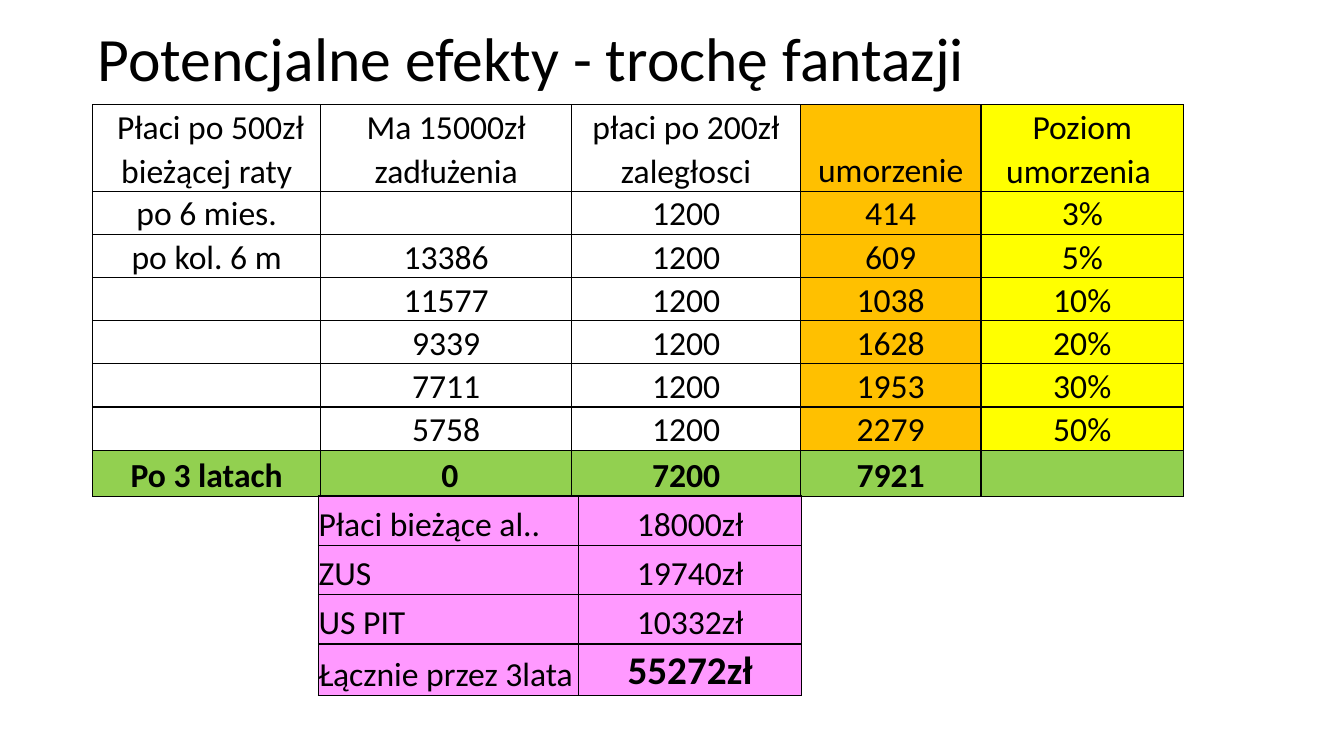
from dataclasses import dataclass

from lxml.etree import SubElement
from pptx import Presentation
from pptx.dml.color import RGBColor
from pptx.enum.text import MSO_ANCHOR as ANCHOR, PP_ALIGN as ALIGN
from pptx.oxml.ns import qn
from pptx.util import Inches, Pt


@dataclass(frozen=True)
class Theme:
    """Font, colours and type sizes of the slide."""
    font: str = "Calibri"
    ink: str = "000000"
    orange: str = "FFC000"
    yellow: str = "FFFF00"
    green: str = "92D050"
    pink: str = "FF99FF"
    title: int = 44
    body: int = 24
    total: int = 28
    border: float = 1


THEME = Theme()

HEADERS = [" Płaci po 500zł bieżącej raty", "Ma 15000zł zadłużenia",
           "płaci po 200zł zaległosci", "umorzenie", "Poziom umorzenia "]
PERIODS = [
    ["po 6 mies.", "", "1200", "414", "3%"],
    ["po kol. 6 m", "13386", "1200", "609", "5%"],
    ["", "11577", "1200", "1038", "10%"],
    ["", "9339", "1200", "1628", "20%"],
    ["", "7711", "1200", "1953", "30%"],
    ["", "5758", "1200", "2279", "50%"],
]
AFTER_3_YEARS = ["Po 3 latach", " 0", "7200", "7921", ""]
PAYMENTS = [
    ["Płaci bieżące al..", "18000zł"],
    ["ZUS", "19740zł"],
    ["US PIT", "10332zł"],
    ["Łącznie przez 3lata", "55272zł"],
]


def write(tf, text, size=THEME.body, bold=False, align=ALIGN.CENTER, spacing=1.0):
    """Put one formatted paragraph into a text frame."""
    p = tf.paragraphs[0]
    p.alignment, p.line_spacing = align, spacing
    p.font.size = Pt(size)
    if text:
        r = p.add_run()
        r.text = text
        r.font.name, r.font.size, r.font.bold = THEME.font, Pt(size), bold
        r.font.color.rgb = RGBColor.from_string(THEME.ink)


def add_title(s, text):
    """Add the slide title."""
    sp = s.shapes.add_textbox(Inches(0.92), Inches(0.18), Inches(11.5), Inches(0.86))
    tf = sp.text_frame
    tf.word_wrap, tf.vertical_anchor = True, ANCHOR.MIDDLE
    tf.margin_left = tf.margin_right = tf.margin_top = tf.margin_bottom = Inches(0.05)
    write(tf, text, size=THEME.title, align=ALIGN.LEFT, spacing=0.9)


def add_grid(s, left, top, widths, heights):
    """Add a plain table with the given column widths and row heights."""
    table = s.shapes.add_table(len(heights), len(widths), Inches(left), Inches(top),
                               Inches(sum(widths)), Inches(sum(heights))).table
    table.first_row = table.horz_banding = False
    for column, width in zip(table.columns, widths):
        column.width = Inches(width)
    for row, height in zip(table.rows, heights):
        row.height = Inches(height)
    return table


def fill_cell(cell, text, fill=None, margin=0, **fmt):
    """Give a cell its borders, fill, margins and text."""
    props = cell._tc.get_or_add_tcPr()
    for side in ("lnL", "lnR", "lnT", "lnB"):
        line = SubElement(props, qn(f"a:{side}"), w=str(Pt(THEME.border)))
        SubElement(SubElement(line, qn("a:solidFill")), qn("a:srgbClr"), val=THEME.ink)
    if fill:
        cell.fill.solid()
        cell.fill.fore_color.rgb = RGBColor.from_string(fill)
    else:
        cell.fill.background()
    cell.margin_left = cell.margin_right = Inches(margin)
    cell.margin_top = cell.margin_bottom = 0
    cell.vertical_anchor = ANCHOR.BOTTOM
    write(cell.text_frame, text, **fmt)


def add_relief_table(s):
    """Add the table of debt relief per half-year."""
    rows = [HEADERS, *PERIODS, AFTER_3_YEARS]
    heights = [0.84] + [0.41] * len(PERIODS) + [0.46]
    table = add_grid(s, 0.92, 1.04, [2.26, 2.49, 2.27, 1.79, 2.01], heights)
    column_fills = [None, None, None, THEME.orange, THEME.yellow]
    for i, row in enumerate(rows):
        last = row is AFTER_3_YEARS
        for j, text in enumerate(row):
            fill_cell(table.cell(i, j), text, fill=THEME.green if last else column_fills[j],
                      margin=0.05, bold=last, spacing=1.07)


def add_payment_table(s):
    """Add the table of payments summed over three years."""
    table = add_grid(s, 3.16, 4.92, [2.58, 2.21], [0.49, 0.49, 0.49, 0.51])
    for i, (label, amount) in enumerate(PAYMENTS):
        last = i == len(PAYMENTS) - 1
        fill_cell(table.cell(i, 0), label, fill=THEME.pink, align=ALIGN.LEFT)
        fill_cell(table.cell(i, 1), amount, fill=THEME.pink, bold=last,
                  size=THEME.total if last else THEME.body)


def main():
    """Build the slide and save it."""
    prs = Presentation()
    prs.slide_width, prs.slide_height = Inches(13.33), Inches(7.5)
    s = prs.slides.add_slide(prs.slide_layouts[6])
    add_title(s, "Potencjalne efekty - trochę fantazji")
    add_relief_table(s)
    add_payment_table(s)
    prs.save("out.pptx")


if __name__ == "__main__":
    main()
